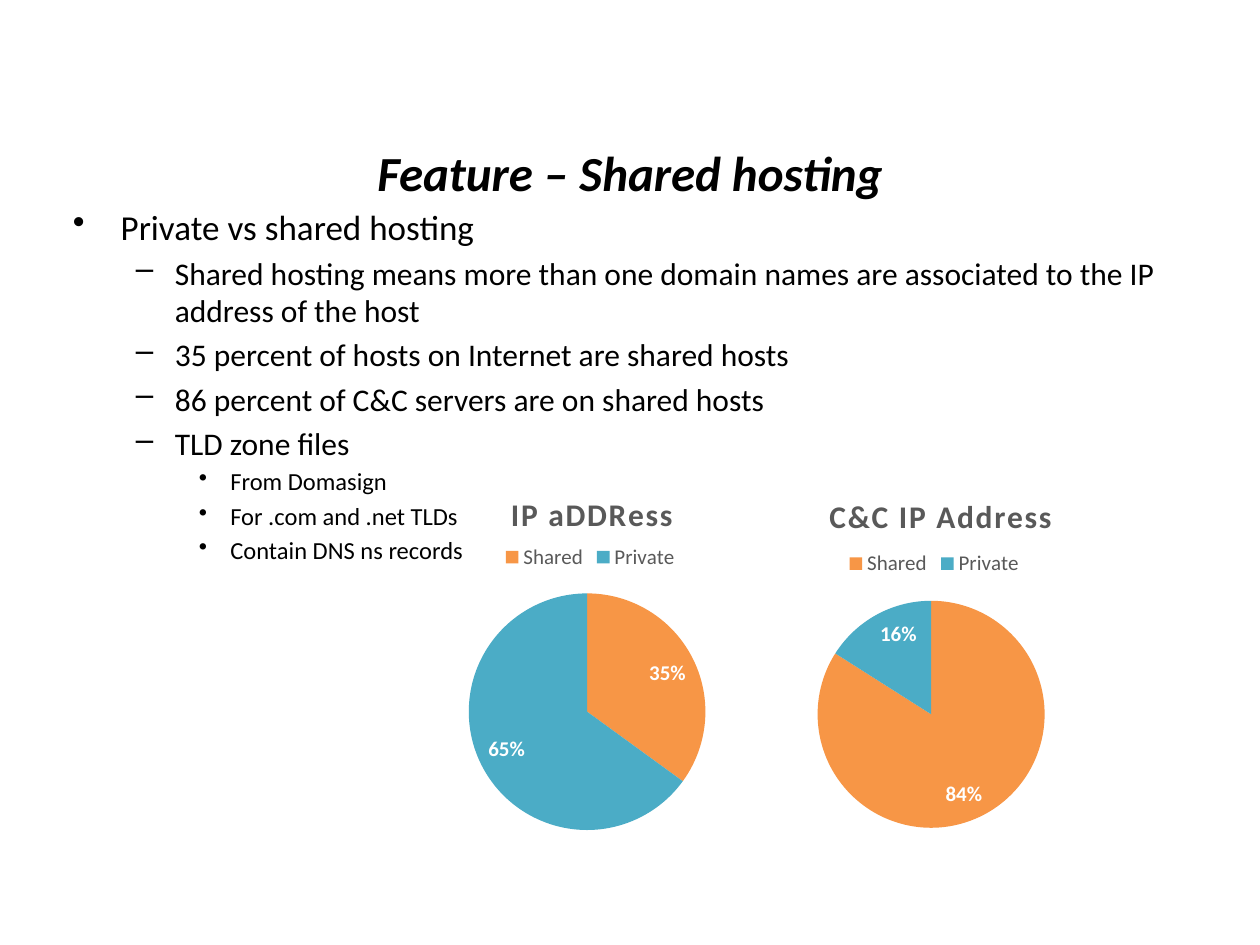
import pptx
import pptx.util
import pptx.dml.color
import pptx.chart.data
import pptx.enum.chart
import pptx.enum.text
import pptx.oxml
import pptx.oxml.ns

Inches = pptx.util.Inches
Pt = pptx.util.Pt
qn = pptx.oxml.ns.qn

FONT = "Calibri"
# Level: text indent, hanging indent, bullet, size
LEVELS = [(0.38, 0.38, "•", 20), (0.81, 0.31, "–", 18), (1.25, 0.25, "•", 14)]
POINTS = [
    (0, "Private vs shared hosting"),
    (1, "Shared hosting means more than one domain names are associated "
        "to the IP address of the host"),
    (1, "35 percent of hosts on Internet are shared hosts"),
    (1, "86 percent of C&C servers are on shared hosts"),
    (1, "TLD zone files"),
    (2, "From Domasign"),
    (2, "For .com and .net TLDs"),
    (2, "Contain DNS ns records"),
]
SLICES = {"Shared": "F79646", "Private": "4BACC6"}


def color(value):
    return pptx.dml.color.RGBColor.from_string(value)


def style(font, size, value, bold=False):
    font.name = FONT
    font.size = Pt(size)
    font.bold = bold
    font.color.rgb = color(value)


def place(item, box):
    item.left, item.top, item.width, item.height = (Inches(n) for n in box)


def add_title(page, box, text):
    title = page.shapes.title
    place(title, box)
    frame = title.text_frame
    frame.text = text
    frame.auto_size = pptx.enum.text.MSO_AUTO_SIZE.NONE
    frame.vertical_anchor = pptx.enum.text.MSO_ANCHOR.TOP
    para = frame.paragraphs[0]
    para.alignment = pptx.enum.text.PP_ALIGN.CENTER
    style(para.font, 28, "000000", bold=True)
    para.font.italic = True


def add_bullets(page, box, points):
    frame = page.shapes.add_textbox(*(Inches(n) for n in box)).text_frame
    frame.word_wrap = True
    for index, (level, text) in enumerate(points):
        para = frame.paragraphs[0] if index == 0 else frame.add_paragraph()
        indent, hanging, bullet, size = LEVELS[level]
        para.text = text
        para.level = level
        para.space_before = Pt(0.2 * size if index else 0)
        props = para._p.get_or_add_pPr()
        props.set("marL", str(Inches(indent)))
        props.set("indent", str(-Inches(hanging)))
        mark = pptx.oxml.parse_xml(
            f'<a:buChar {pptx.oxml.ns.nsdecls("a")} char="{bullet}"/>')
        props.append(mark)
        style(para.font, size, "000000")


def chart_layout(left, top, width=None, height=None, inner=False):
    """Manual layout in fractions of the chart area."""
    parts = ['<c:layoutTarget val="inner"/>'] if inner else []
    parts += ['<c:xMode val="edge"/>', '<c:yMode val="edge"/>']
    for name, value in zip("xywh", (left, top, width, height)):
        if value is not None:
            parts.append(f'<c:{name} val="{value}"/>')
    return pptx.oxml.parse_xml(
        f'<c:layout {pptx.oxml.ns.nsdecls("c")}><c:manualLayout>'
        f'{"".join(parts)}</c:manualLayout></c:layout>')


def set_layout(element, layout, after=None):
    for old in element.findall(qn("c:layout")):
        element.remove(old)
    if after:
        element.find(qn(after)).addnext(layout)
    else:
        element.insert(0, layout)


def add_pie(page, box, heading, values, title_at, legend_at, pie_at):
    data = pptx.chart.data.CategoryChartData()
    data.categories = list(SLICES)
    data.add_series("Series 1", values)
    chart = page.shapes.add_chart(
        pptx.enum.chart.XL_CHART_TYPE.PIE, *(Inches(n) for n in box), data).chart
    style(chart.font, 10, "000000")

    # Title with wide letter spacing
    chart.has_title = True
    title = chart.chart_title
    title.text_frame.text = heading
    para = title.text_frame.paragraphs[0]
    style(para.font, 18, "595959", bold=True)
    para.font._element.set("spc", "100")
    set_layout(title._element, chart_layout(*title_at), after="c:tx")

    # Legend
    chart.has_legend = True
    legend = chart.legend
    legend.position = pptx.enum.chart.XL_LEGEND_POSITION.TOP
    legend.include_in_layout = False
    style(legend.font, 12, "595959")
    set_layout(legend._element, chart_layout(*legend_at), after="c:legendPos")

    # Slices and percentages
    plot = chart.plots[0]
    plot.vary_by_categories = True
    for index, value in enumerate(SLICES.values()):
        fill = plot.series[0].points[index].format.fill
        fill.solid()
        fill.fore_color.rgb = color(value)
    plot.has_data_labels = True
    labels = plot.data_labels
    labels.show_percentage = True
    labels.show_value = False
    labels.number_format = "0%"
    labels.number_format_is_linked = False
    labels.position = pptx.enum.chart.XL_LABEL_POSITION.INSIDE_END
    style(labels.font, 12, "FFFFFF", bold=True)

    # Plot position and clear background
    space = chart._chartSpace
    area = space.find(qn("c:chart"))
    set_layout(area.find(qn("c:plotArea")), chart_layout(*pie_at, inner=True))
    area.addnext(pptx.oxml.parse_xml(
        f'<c:spPr {pptx.oxml.ns.nsdecls("c", "a")}><a:noFill/>'
        '<a:ln><a:noFill/></a:ln></c:spPr>'))


def main():
    deck = pptx.Presentation()
    deck.slide_width, deck.slide_height = Inches(10), Inches(7.5)
    page = deck.slides.add_slide(deck.slide_layouts[5])
    add_title(page, (0.5, 1.08, 9, 0.47), "Feature – Shared hosting")
    add_bullets(page, (0.48, 1.58, 9, 4.95), POINTS)
    add_pie(page, (4.98, 3.67, 4.87, 3.03), "C&C IP Address", (84, 16),
            (0.32, 0.07), (0.35, 0.23, 0.3, 0.07), (0.31, 0.36, 0.37, 0.6))
    add_pie(page, (2.16, 3.68, 5, 3.03), "IP aDDRess", (35, 65),
            (0.37, 0.06), (0.36, 0.21, 0.29, 0.07), (0.31, 0.34, 0.38, 0.62))
    deck.save("out.pptx")


if __name__ == "__main__":
    main()
